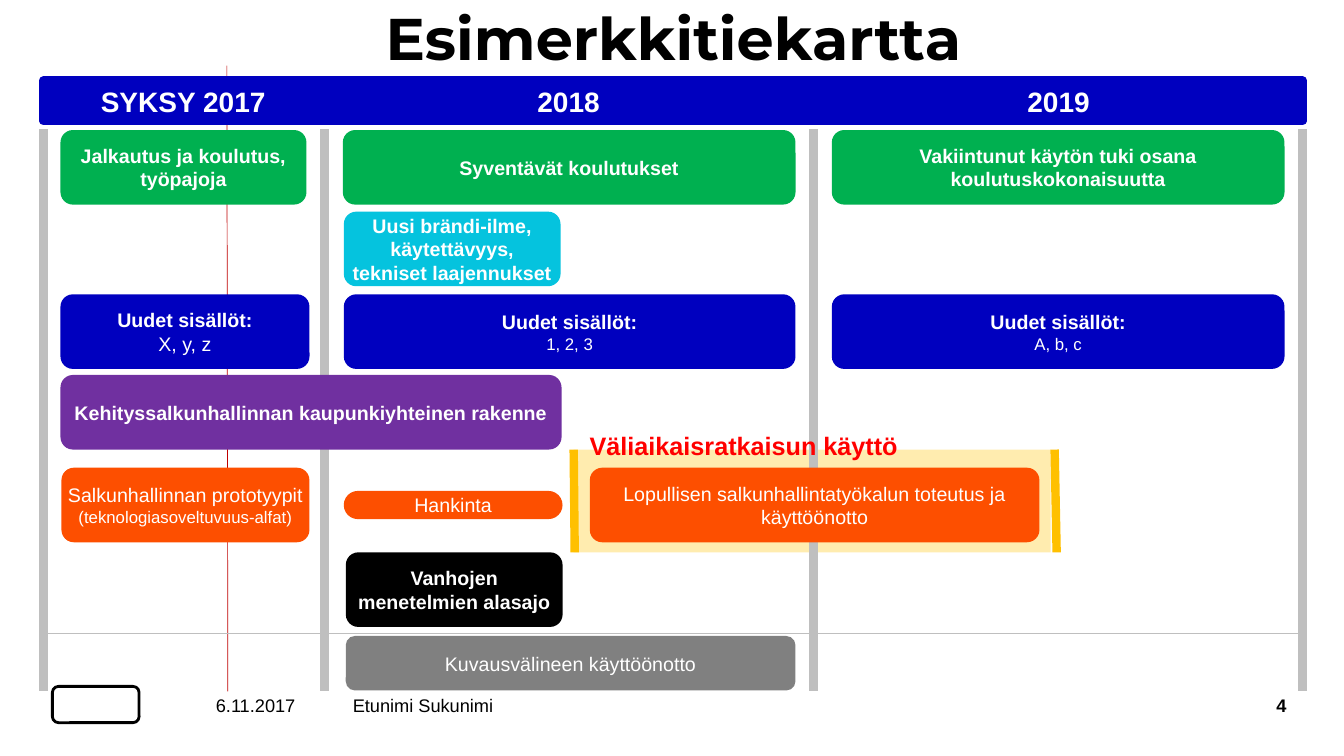
"""Build the roadmap slide with its year columns and work packages."""
import pptx
import pptx.util
import pptx.dml.color
import pptx.enum.shapes
import pptx.enum.text
import pptx.oxml

Inches, Pt = pptx.util.Inches, pptx.util.Pt
RGBColor = pptx.dml.color.RGBColor
SHAPE = pptx.enum.shapes.MSO_SHAPE
ALIGN = pptx.enum.text.PP_ALIGN
ANCHOR = pptx.enum.text.MSO_ANCHOR

BLACK = RGBColor(0x00, 0x00, 0x00)
WHITE = RGBColor(0xFF, 0xFF, 0xFF)
BLUE = RGBColor(0x00, 0x00, 0xBF)
GREEN = RGBColor(0x00, 0xB0, 0x50)
CYAN = RGBColor(0x05, 0xC3, 0xDE)
PURPLE = RGBColor(0x70, 0x30, 0xA0)
ORANGE = RGBColor(0xFD, 0x4F, 0x00)
GREY = RGBColor(0x80, 0x80, 0x80)
SILVER = RGBColor(0xBF, 0xBF, 0xBF)
CREAM = RGBColor(0xFF, 0xEC, 0xAF)
AMBER = RGBColor(0xFF, 0xC0, 0x00)
RED = RGBColor(0xFF, 0x00, 0x00)
MAROON = RGBColor(0xC0, 0x00, 0x00)

deck = pptx.Presentation()
deck.slide_width, deck.slide_height = Inches(13.33), Inches(7.5)
slide = deck.slides.add_slide(deck.slide_layouts[5])
shapes = slide.shapes


def write(shape, lines, color, align, anchor, pads, wrap=True, font="Arial"):
    """Fill a shape with lines of (text, size, bold)."""
    frame = shape.text_frame
    frame.text = "\n".join(line[0] for line in lines)
    frame.word_wrap = wrap
    frame.auto_size = pptx.enum.text.MSO_AUTO_SIZE.NONE
    frame.vertical_anchor = anchor
    frame.margin_left = frame.margin_right = Inches(pads[0])
    frame.margin_top = frame.margin_bottom = Inches(pads[1])
    for para, (text, size, bold) in zip(frame.paragraphs, lines):
        para.alignment = align
        face = para.runs[0].font
        face.name, face.size, face.bold = font, Pt(size), bold
        face.color.rgb = color


def rule(x1, y1, x2, y2, color, width):
    """Draw a straight line without a shadow."""
    line = shapes.add_connector(
        pptx.enum.shapes.MSO_CONNECTOR.STRAIGHT,
        Inches(x1), Inches(y1), Inches(x2), Inches(y2))
    line.line.color.rgb = color
    line.line.width = Pt(width)
    effect = pptx.oxml.parse_xml(
        '<a:effectLst xmlns:a="http://schemas.openxmlformats.org/drawingml/2006/main"/>')
    line._element.spPr.append(effect)


badge = shapes.add_shape(SHAPE.ROUNDED_RECTANGLE, Inches(0.52), Inches(6.81),
                         Inches(0.86), Inches(0.36))
badge.shadow.inherit = False
badge.fill.background()
badge.line.color.rgb = BLACK
badge.line.width = Pt(2)

rule(2.25, 0.65, 2.26, 6.86, MAROON, 0.5)

band = shapes.add_shape(SHAPE.RECTANGLE, Inches(5.69), Inches(4.46),
                        Inches(4.73), Inches(1.02))
band.shadow.inherit = False
band.fill.solid()
band.fill.fore_color.rgb = CREAM
band.line.fill.background()

for x in (0.43, 3.22, 8.07, 12.92):
    rule(x, 1.28, x, 6.86, SILVER, 6)

header = shapes.add_shape(SHAPE.RECTANGLE, Inches(0.43), Inches(0.8),
                          Inches(12.49), Inches(0.4))
header.shadow.inherit = False
header.fill.solid()
header.fill.fore_color.rgb = BLUE
header.line.color.rgb = BLUE
header.line.width = Pt(6)

rule(0.43, 6.28, 12.92, 6.28, SILVER, 0.5)

title = shapes.title
title.left, title.top = Inches(2.07), Inches(0.1)
title.width, title.height = Inches(9.22), Inches(0.75)
write(title, [("Esimerkkitiekartta", 42, True)], BLACK, ALIGN.CENTER,
      ANCHOR.TOP, (0, 0), font="Montserrat")
title.text_frame.paragraphs[0].line_spacing = 0.9
shapes._spTree.append(title._element)

cards = [
    (0.6, 1.29, 2.44, 0.74, GREEN,
     [("Jalkautus ja koulutus,", 14, True), ("työpajoja", 14, True)]),
    (3.4, 1.29, 4.49, 0.74, GREEN, [("Syventävät koulutukset", 14, True)]),
    (8.25, 1.29, 4.49, 0.74, GREEN,
     [("Vakiintunut käytön tuki osana", 14, True),
      ("koulutuskokonaisuutta", 14, True)]),
    (3.41, 2.1, 2.15, 0.74, CYAN,
     [("Uusi brändi-ilme, käytettävyys,", 14, True),
      ("tekniset laajennukset", 14, True)]),
    (0.6, 2.92, 2.47, 0.74, BLUE,
     [("Uudet sisällöt:", 14, True), ("X, y, z", 14, False)]),
    (3.41, 2.92, 4.48, 0.74, BLUE,
     [("Uudet sisällöt:", 14, True), ("1, 2, 3", 12, False)]),
    (8.25, 2.92, 4.49, 0.74, BLUE,
     [("Uudet sisällöt:", 14, True), ("A, b, c", 12, False)]),
    (0.6, 3.72, 4.97, 0.74, PURPLE,
     [("Kehityssalkunhallinnan kaupunkiyhteinen rakenne", 14, True)]),
    (0.61, 4.64, 2.46, 0.74, ORANGE,
     [("Salkunhallinnan prototyypit", 14, False),
      ("(teknologiasoveltuvuus-alfat)", 12, False)]),
    (3.41, 4.87, 2.17, 0.28, ORANGE, [("Hankinta", 14, False)]),
    (5.85, 4.64, 4.46, 0.74, ORANGE,
     [("Lopullisen salkunhallintatyökalun toteutus ja käyttöönotto", 14, False)]),
    (3.43, 5.48, 2.15, 0.74, BLACK, [("Vanhojen menetelmien alasajo", 14, True)]),
    (3.43, 6.31, 4.46, 0.54, GREY, [("Kuvausvälineen käyttöönotto", 14, False)]),
]
for x, y, wide, high, color, lines in cards:
    card = shapes.add_shape(SHAPE.ROUNDED_RECTANGLE, Inches(x), Inches(y),
                            Inches(wide), Inches(high))
    card.shadow.inherit = False
    card.fill.solid()
    card.fill.fore_color.rgb = color
    card.line.fill.background()
    if high < 0.5:
        card.adjustments[0] = 0.5
    write(card, lines, WHITE, ALIGN.CENTER, ANCHOR.MIDDLE, (0, 0.04))

rule(5.69, 4.46, 5.7, 5.48, AMBER, 6)
rule(10.46, 4.46, 10.48, 5.48, AMBER, 6)

tight, none, roomy = (0.04, 0.04), (0, 0), (0.1, 0.05)
labels = [
    (0.96, 0.8, 1.73, 0.42, "SYKSY 2017", 20, True, WHITE, ALIGN.LEFT, tight),
    (5.29, 0.8, 0.7, 0.42, "2018", 20, True, WHITE, ALIGN.LEFT, tight),
    (10.15, 0.8, 0.7, 0.42, "2019", 20, True, WHITE, ALIGN.LEFT, tight),
    (5.75, 4.22, 3.36, 0.4, "Väliaikaisratkaisun käyttö", 18, True, RED,
     ALIGN.LEFT, roomy),
    (1.82, 6.86, 1.43, 0.28, "6.11.2017", 13, False, BLACK, ALIGN.CENTER, none),
    (3.5, 6.86, 4.5, 0.28, "Etunimi Sukunimi", 13, False, BLACK, ALIGN.LEFT, none),
    (11.41, 6.86, 1.35, 0.28, "4", 13, True, BLACK, ALIGN.RIGHT, none),
]
for x, y, wide, high, text, size, bold, color, align, pads in labels:
    box = shapes.add_textbox(Inches(x), Inches(y), Inches(wide), Inches(high))
    anchor = ANCHOR.MIDDLE if pads == none else ANCHOR.TOP
    write(box, [(text, size, bold)], color, align, anchor, pads, pads == none)

deck.save("out.pptx")
